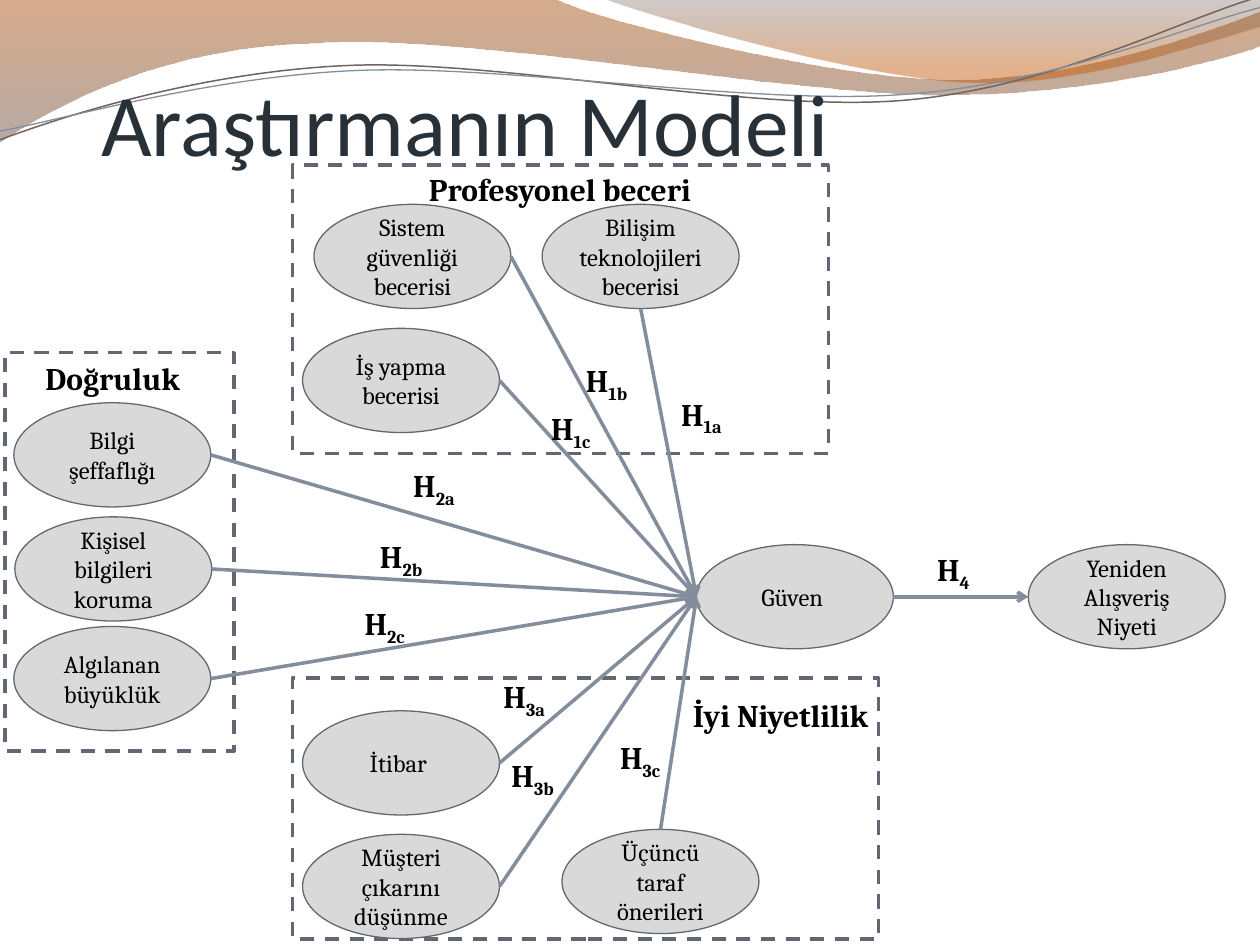
from lxml import etree
from pptx import Presentation
from pptx.dml.color import RGBColor
from pptx.enum.dml import MSO_LINE
from pptx.enum.shapes import MSO_CONNECTOR, MSO_SHAPE
from pptx.enum.text import MSO_ANCHOR, MSO_AUTO_SIZE, PP_ALIGN
from pptx.oxml.ns import qn
from pptx.util import Cm, Pt

OVAL, RECTANGLE = MSO_SHAPE.FLOWCHART_CONNECTOR, MSO_SHAPE.RECTANGLE
STRAIGHT, DASH = MSO_CONNECTOR.STRAIGHT, MSO_LINE.DASH
LEFT, CENTER = PP_ALIGN.LEFT, PP_ALIGN.CENTER
MIDDLE, BOTTOM = MSO_ANCHOR.MIDDLE, MSO_ANCHOR.BOTTOM
NO_FIT, FIT_SHAPE = MSO_AUTO_SIZE.NONE, MSO_AUTO_SIZE.SHAPE_TO_FIT_TEXT

OVAL_WIDTH, OVAL_HEIGHT, LINE_HEIGHT = 3.97, 2.1, 1.02
WAVE_UNIT = 2.54
OUTLINE, ARROW, OVAL_FILL, INK = "616873", "838D9B", "D9D9D9", "000000"
OVAL_FONT = {"name": "Cambria", "size": Pt(14)}
LABEL_FONT = {"name": "Cambria", "size": Pt(18), "bold": True}

FILLED_WAVES = [
    ([("L", 0, 0), ("L", 4.4, -0.01), ("C", 4.76, 0.17, 6.64, 0.63, 7.58, 0.63),
      ("C", 8.53, 0.63, 9.58, 0.26, 10, 0.09), ("L", 10.01, 0.36),
      ("C", 9.83, 0.44, 8.7, 0.76, 7.46, 0.75), ("C", 6.22, 0.75, 3.82, 0.28, 2.57, 0.34),
      ("C", 1.29, 0.36, 0.46, 0.83, -0.01, 1.13), ("L", 0, 0)],
     [(0, "A44700", 45), (1, "7A655B", 55)]),
    ([("L", 4.79, -0.01), ("C", 5.09, 0.11, 6.82, 0.62, 7.69, 0.65),
      ("C", 8.56, 0.69, 9.61, 0.32, 10, 0.21), ("L", 10, 0), ("L", 4.79, -0.01)],
     [(0, "61534C", 30), (0.8, "C45400", 45)]),
]
LINE_WAVES = [
    ([("L", 0, 1.11), ("C", 0.48, 0.93, 1.58, 0.57, 2.77, 0.52),
      ("C", 3.95, 0.47, 5.93, 0.89, 7.13, 0.8), ("C", 8.33, 0.71, 9.38, 0.15, 9.98, -0.02)],
     "71645E", 0.85),
    ([("L", 0, 1.04), ("C", 0.47, 0.96, 1.64, 0.61, 2.83, 0.56),
      ("C", 4.03, 0.51, 5.97, 0.84, 7.17, 0.75), ("C", 8.36, 0.67, 9.41, 0.21, 10, 0.06)],
     "838D9B", 0.75),
]
GROUPS = [
    ((5.9, 3.33, 10.8, 5.81), ("Profesyonel beceri", 2.33, -0.03, 6.12),
     [("Sistem güvenliği becerisi", 0.43, 0.79, "right"),
      ("Bilişim teknolojileri becerisi", 5.03, 0.79, "bottom"),
      ("İş yapma becerisi", 0.2, 3.29, "right")]),
    ((0.1, 7.11, 4.62, 8.03), ("Doğruluk", 0.46, 0, 3.43),
     [("Bilgi şeffaflığı", 0.18, 1.01, "right"),
      ("Kişisel bilgileri koruma", 0.2, 3.31, "right"),
      ("Algılanan büyüklük", 0.18, 5.52, "right")]),
    ((5.9, 13.67, 11.81, 5.26), ("İyi Niyetlilik", 7.69, 0.23, 4.29),
     [("İtibar ", 0.2, 0.66, "right"),
      ("Müşteri çıkarını düşünme", 0.2, 3.15, "right"),
      ("Üçüncü taraf önerileri", 5.43, 3.05, "top")]),
]
HYPOTHESES = [
    ("1a", 13.48, 7.83), ("1b", 11.56, 7.16), ("1c", 10.86, 8.13),
    ("2a", 8.08, 9.27), ("2b", 7.41, 10.7), ("2c", 7.1, 12.06),
    ("3a", 9.9, 13.52), ("3b", 10.06, 15.11), ("3c", 12.25, 14.76),
    ("4", 18.64, 10.97),
]


def color(value):
    return RGBColor.from_string(value)


def apply(target, values):
    for name, value in values.items():
        setattr(target, name, value)


def set_line(line, value, width):
    line.color.rgb = color(value)
    line.width = Pt(width)


def add_span(para, text, font, ink=INK):
    span = para.add_run()
    span.text = text
    apply(span.font, font)
    span.font.color.rgb = color(ink)
    return span


def add_wave(page, segments):
    points = [(Cm(x * WAVE_UNIT), Cm(y * WAVE_UNIT))
              for _, *values in segments for x, y in zip(values[::2], values[1::2])]
    builder = page.shapes.build_freeform(*points[0])
    builder.add_line_segments(points[1:], close=False)
    wave = builder.convert_to_shape()
    wave.shadow.inherit = False
    lines = iter(list(wave._element.iter(qn("a:lnTo"))))
    for kind, *_ in segments[1:]:
        line = next(lines)
        if kind == "C":
            line.addprevious(curve := etree.Element(qn("a:cubicBezTo")))
            for part in (line, next(lines), next(lines)):
                curve.append(part[0])
                part.getparent().remove(part)
    return wave


def move_to_master(master, wave):
    tree = master.shapes._spTree
    wave._element.nvSpPr.cNvPr.set("id", str(100 + len(tree)))
    tree.append(wave._element)


def draw_waves(page, master):
    for segments, stops in FILLED_WAVES:
        wave = add_wave(page, segments)
        wave.fill.gradient()
        wave.fill.gradient_angle = 270
        for stop, (position, value, _) in zip(wave.fill.gradient_stops, stops):
            stop.position = position
            stop.color.rgb = color(value)
        for node, (_, _, opacity) in zip(wave._element.spPr.iter(qn("a:srgbClr")), stops):
            etree.SubElement(node, qn("a:alpha")).set("val", str(opacity * 1000))
        wave.line.fill.background()
        move_to_master(master, wave)
    for segments, value, width in LINE_WAVES:
        wave = add_wave(page, segments)
        wave.fill.background()
        set_line(wave.line, value, width)
        move_to_master(master, wave)


def draw_title(page, box, text):
    title = page.shapes.title
    apply(title, dict(zip(("left", "top", "width", "height"), map(Cm, box))))
    apply(title.text_frame, {"margin_left": 0, "margin_right": 0, "margin_bottom": 0,
                             "vertical_anchor": BOTTOM, "word_wrap": True, "auto_size": NO_FIT})
    para = title.text_frame.paragraphs[0]
    para.alignment = LEFT
    add_span(para, text, {"name": "Calibri", "size": Pt(50)}, "283138")


def add_oval(page, left, top, text):
    oval = page.shapes.add_shape(OVAL, Cm(left), Cm(top), Cm(OVAL_WIDTH), Cm(OVAL_HEIGHT))
    oval.shadow.inherit = False
    oval.fill.solid()
    oval.fill.fore_color.rgb = color(OVAL_FILL)
    set_line(oval.line, OUTLINE, 0.75)
    apply(oval.text_frame, {"word_wrap": True, "vertical_anchor": MIDDLE})
    if "teknolojileri" in text:
        apply(oval.text_frame, {"margin_left": 0, "margin_right": 0})
    para = oval.text_frame.paragraphs[0]
    para.alignment = CENTER
    add_span(para, text, OVAL_FONT)
    return {"left": (left, top + OVAL_HEIGHT / 2),
            "right": (left + OVAL_WIDTH, top + OVAL_HEIGHT / 2),
            "top": (left + OVAL_WIDTH / 2, top),
            "bottom": (left + OVAL_WIDTH / 2, top + OVAL_HEIGHT)}


def add_label(page, left, top, width, text, alignment):
    label = page.shapes.add_textbox(Cm(left), Cm(top), Cm(width), Cm(LINE_HEIGHT))
    apply(label.text_frame, {"word_wrap": False, "auto_size": FIT_SHAPE})
    para = label.text_frame.paragraphs[0]
    para.alignment = alignment
    add_span(para, text, LABEL_FONT)
    return para


def add_arrow(page, start, end):
    arrow = page.shapes.add_connector(STRAIGHT, *map(Cm, (*start, *end)))
    set_line(arrow.line, ARROW, 2)
    etree.SubElement(arrow.line._get_or_add_ln(), qn("a:tailEnd")).set("type", "arrow")
    etree.SubElement(arrow._element.spPr, qn("a:effectLst"))


def draw_group(page, box, heading, factors):
    left, top = box[:2]
    frame = page.shapes.add_shape(RECTANGLE, *map(Cm, box))
    frame.shadow.inherit = False
    frame.fill.background()
    set_line(frame.line, OUTLINE, 2)
    frame.line.dash_style = DASH
    text, across, down, width = heading
    add_label(page, left + across, top + down, width, text, CENTER)
    return [add_oval(page, left + across, top + down, text)[side]
            for text, across, down, side in factors]


def draw_outcomes(page, box):
    left, top, width = box
    trust = add_oval(page, left, top, "Güven ")
    intent = add_oval(page, left + width - OVAL_WIDTH, top, "Yeniden Alışveriş Niyeti")
    add_arrow(page, trust["right"], intent["left"])
    return trust["left"]


def draw_hypotheses(page):
    for number, left, top in HYPOTHESES:
        para = add_label(page, left, top, 1.47, "H", LEFT)
        span = add_span(para, number, LABEL_FONT)
        span._r.get_or_add_rPr().set("baseline", "-25000")


def main():
    deck = Presentation()
    deck.slide_width, deck.slide_height = Cm(25.4), Cm(19.05)
    page = deck.slides.add_slide(deck.slide_layouts[5])
    draw_waves(page, deck.slide_master)
    draw_title(page, (2.04, 0.33, 22.86, 3.18), "Araştırmanın Modeli")
    starts = [start for group in GROUPS for start in draw_group(page, *group)]
    target = draw_outcomes(page, (14.04, 10.98, 10.66))
    for start in starts:
        add_arrow(page, start, target)
    draw_hypotheses(page)
    deck.save("out.pptx")


if __name__ == "__main__":
    main()
